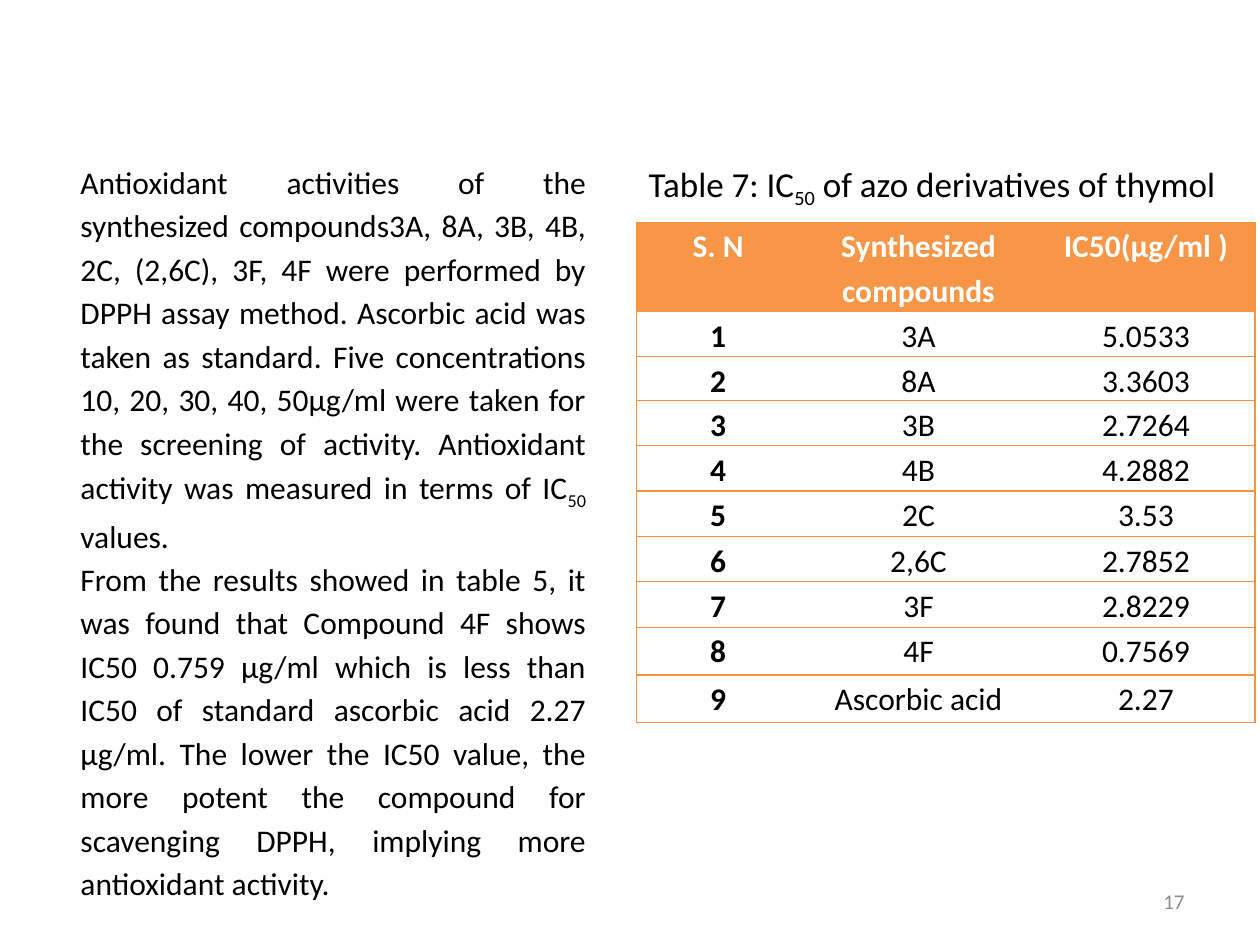
from lxml import etree
from pptx import Presentation
from pptx.dml.color import RGBColor
from pptx.enum.text import MSO_ANCHOR, MSO_AUTO_SIZE, PP_ALIGN
from pptx.oxml.ns import qn
from pptx.util import Inches, Pt

LEFT, CENTER, RIGHT, JUSTIFY = PP_ALIGN.LEFT, PP_ALIGN.CENTER, PP_ALIGN.RIGHT, PP_ALIGN.JUSTIFY
TOP, MIDDLE = MSO_ANCHOR.TOP, MSO_ANCHOR.MIDDLE
GROW = MSO_AUTO_SIZE.SHAPE_TO_FIT_TEXT

BLACK = RGBColor(0x00, 0x00, 0x00)
WHITE = RGBColor(0xFF, 0xFF, 0xFF)
GRAY = RGBColor(0x8C, 0x8C, 0x8C)
HEADER_ORANGE = RGBColor(0xF7, 0x96, 0x46)
LINE_ORANGE = RGBColor(0xF6, 0x92, 0x40)

FONT = "Calibri"
WIDTH, HEIGHT = Inches(10), Inches(7.5)
LINE_SPACING = 1.15
TABLE_LEFT, TABLE_WIDTH = 0.505, 0.491

COLUMN_WIDTHS = [1.3, 1.88, 1.73]
ROW_HEIGHTS = [0.71, 0.36, 0.34] + [0.36] * 5 + [0.38] * 2
HEADINGS = ["S. N", "Synthesized compounds", "IC50(µg/ml )"]
RESULTS = [
    ("3A", "5.0533"),
    ("8A", "3.3603"),
    ("3B", "2.7264"),
    ("4B", "4.2882"),
    ("2C", "3.53"),
    ("2,6C", "2.7852"),
    ("3F", "2.8229"),
    ("4F", "0.7569"),
    ("Ascorbic acid", "2.27"),
]

METHOD = (
    "Antioxidant activities of the synthesized compounds3A, 8A, 3B, 4B, 2C, (2,6C), 3F, 4F "
    "were performed by DPPH assay method. Ascorbic acid was taken as standard. Five "
    "concentrations 10, 20, 30, 40, 50µg/ml were taken for the screening of activity. "
    "Antioxidant activity was measured in terms of IC"
)
FINDING = (
    "From the results showed in table 5, it was found that Compound 4F shows IC50 0.759 µg/ml "
    "which is less than IC50 of standard ascorbic acid 2.27 µg/ml. The lower the IC50 value, "
    "the more potent the compound for scavenging DPPH, implying more antioxidant activity."
)


def add_span(para, text, size, color, bold=False, subscript=False):
    span = para.add_run()
    span.text = text
    font = span.font
    font.name, font.size, font.bold = FONT, Pt(size), bold
    font.color.rgb = color
    if subscript:
        span._r.get_or_add_rPr().set("baseline", "-25000")


def add_text(page, area, paragraphs, size, color=BLACK, align=LEFT, spacing=None,
             anchor=TOP, auto_size=MSO_AUTO_SIZE.NONE):
    """Area is left, top, width, height as shares; every second span is a subscript."""
    left, top, width, height = area
    box = page.shapes.add_textbox(int(left * WIDTH), int(top * HEIGHT),
                                  int(width * WIDTH), int(height * HEIGHT))
    frame = box.text_frame
    frame.word_wrap = True
    frame.auto_size = auto_size
    frame.vertical_anchor = anchor
    for index, spans in enumerate(paragraphs):
        para = frame.add_paragraph() if index else frame.paragraphs[0]
        para.alignment = align
        if spacing:
            para.line_spacing = spacing
        for position, text in enumerate(spans):
            add_span(para, text, size, color, subscript=position % 2 == 1)


def set_borders(cell, visible_sides):
    properties = cell._tc.get_or_add_tcPr()
    for side in "LRTB":
        line = etree.SubElement(properties, qn(f"a:ln{side}"), w=str(Pt(0.75)))
        if side in visible_sides:
            fill = etree.SubElement(line, qn("a:solidFill"))
            etree.SubElement(fill, qn("a:srgbClr"), val=str(LINE_ORANGE))
        else:
            etree.SubElement(line, qn("a:noFill"))


def fill_cell(cell, text, is_header, is_first, is_last):
    cell.margin_left = cell.margin_right = Inches(0.07)
    cell.margin_top = cell.margin_bottom = 0
    set_borders(cell, "TB" + "L" * is_first + "R" * is_last)
    if is_header:
        cell.fill.solid()
        cell.fill.fore_color.rgb = HEADER_ORANGE
    else:
        cell.fill.background()
    para = cell.text_frame.paragraphs[0]
    para.alignment = CENTER
    para.line_spacing = LINE_SPACING
    add_span(para, text, 18, WHITE if is_header else BLACK, bold=is_header or is_first)


def add_results_table(page):
    rows = [HEADINGS] + [(str(number), *result) for number, result in enumerate(RESULTS, 1)]
    table = page.shapes.add_table(
        len(rows), len(HEADINGS), int(TABLE_LEFT * WIDTH), int(0.235 * HEIGHT),
        int(TABLE_WIDTH * WIDTH), Inches(sum(ROW_HEIGHTS))).table
    table.horz_banding = False
    for column, width in zip(table.columns, COLUMN_WIDTHS):
        column.width = Inches(width)
    for row, height in zip(table.rows, ROW_HEIGHTS):
        row.height = Inches(height)
    last = len(HEADINGS) - 1
    for row_index, values in enumerate(rows):
        for column_index, text in enumerate(values):
            fill_cell(table.cell(row_index, column_index), text,
                      row_index == 0, column_index == 0, column_index == last)


def main():
    deck = Presentation()
    deck.slide_width, deck.slide_height = WIDTH, HEIGHT
    page = deck.slides.add_slide(deck.slide_layouts[6])
    add_text(page, (0.717, 0.927, 0.233, 0.053), [["17"]], 12, GRAY, RIGHT, anchor=MIDDLE)
    add_text(page, (0.054, 0.16, 0.421, 0.8), [[METHOD, "50", " values."], [FINDING]], 18,
             align=JUSTIFY, spacing=LINE_SPACING, auto_size=GROW)
    add_results_table(page)
    add_text(page, (TABLE_LEFT, 0.165, TABLE_WIDTH, 0.058),
             [["Table 7: IC", "50", " of azo derivatives of thymol"]], 20, auto_size=GROW)
    deck.save("out.pptx")


if __name__ == "__main__":
    main()
